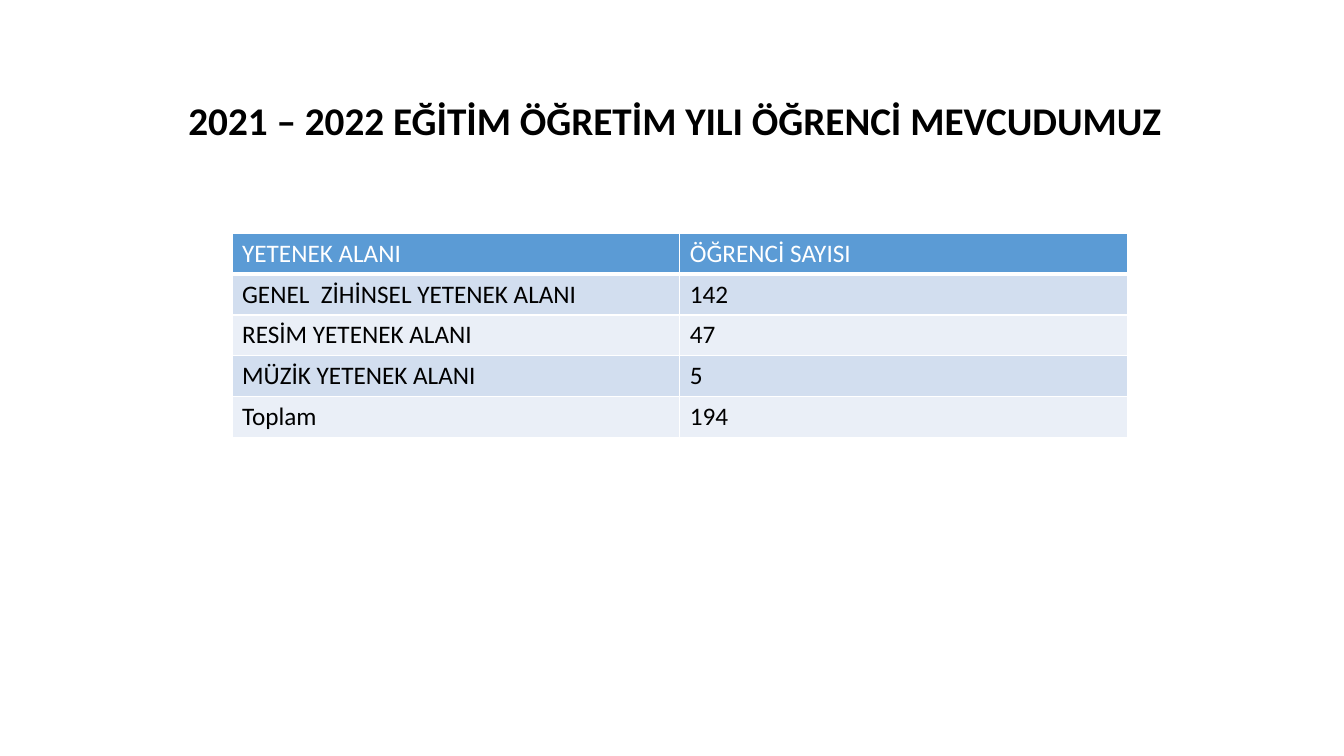
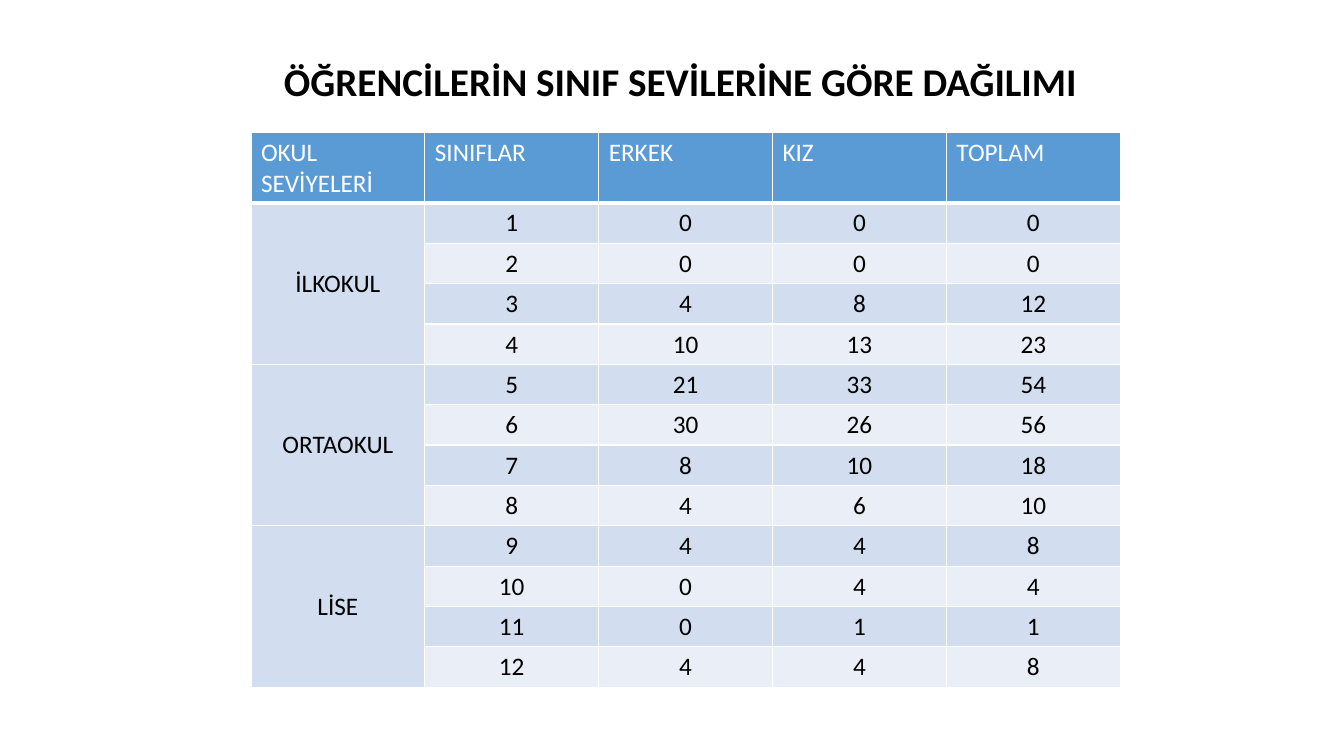
from dataclasses import dataclass

from lxml import etree
from pptx import Presentation
from pptx import util as u
from pptx.dml.color import RGBColor
from pptx.enum import text
from pptx.oxml import ns

EMU_PER_PX = 9525
FONT = "Calibri"
BLACK = RGBColor(0x00, 0x00, 0x00)
WHITE = RGBColor(0xFF, 0xFF, 0xFF)
HEADER_BLUE = RGBColor(0x5B, 0x9B, 0xD5)
BANDS = (RGBColor(0xEA, 0xEF, 0xF7), RGBColor(0xD2, 0xDE, 0xEF))

CLASSES_PER_LEVEL = 4
SCHOOL_LEVELS = ("İLKOKUL", "ORTAOKUL", "LİSE")
BOYS_AND_GIRLS = (
    (0, 0), (0, 0), (4, 8), (10, 13),
    (21, 33), (30, 26), (8, 10), (4, 6),
    (4, 4), (0, 4), (0, 1), (4, 4),
)


@dataclass(frozen=True)
class Box:
    left: int
    top: int
    width: int
    height: int

    def emu(self) -> tuple[u.Emu, ...]:
        return tuple(px(n) for n in (self.left, self.top, self.width, self.height))


@dataclass(frozen=True)
class TableSlide:
    title: str
    title_box: Box
    table_box: Box
    header_height: int
    row_height: int
    rows: tuple[tuple[str, ...], ...]
    body_alignment: text.PP_ALIGN = text.PP_ALIGN.LEFT
    rows_per_label: int = 1


def px(length: int) -> u.Emu:
    return u.Emu(length * EMU_PER_PX)


def add_run(paragraph, content: str, size: int, color: RGBColor, bold: bool = False) -> None:
    run = paragraph.add_run()
    run.text = content
    run.font.name = FONT
    run.font.size = u.Pt(size)
    run.font.bold = bold
    run.font.color.rgb = color


def add_title(slide, title: str, box: Box) -> None:
    frame = slide.shapes.add_textbox(*box.emu()).text_frame
    frame.word_wrap = False
    frame.auto_size = text.MSO_AUTO_SIZE.SHAPE_TO_FIT_TEXT
    add_run(frame.paragraphs[0], title, 28, BLACK, bold=True)


def set_borders(cell, bottom_points: int) -> None:
    properties = cell._tc.get_or_add_tcPr()
    for side, points in (("L", 1), ("R", 1), ("T", 1), ("B", bottom_points)):
        line = etree.SubElement(properties, ns.qn(f"a:ln{side}"), w=str(u.Pt(points)))
        fill = etree.SubElement(line, ns.qn("a:solidFill"))
        etree.SubElement(fill, ns.qn("a:srgbClr"), val=str(WHITE))


def style_cell(cell, fill: RGBColor, bottom_points: int) -> None:
    set_borders(cell, bottom_points)
    cell.fill.solid()
    cell.fill.fore_color.rgb = fill


def add_table(slide, content: TableSlide) -> None:
    column_count = len(content.rows[0])
    graphic = slide.shapes.add_table(len(content.rows), column_count, *content.table_box.emu())
    table = graphic.table
    for column in table.columns:
        column.width = px(content.table_box.width) // column_count
    for row_index, values in enumerate(content.rows):
        is_header = row_index == 0
        table.rows[row_index].height = px(content.header_height if is_header else content.row_height)
        for column_index, value in enumerate(values):
            cell = table.cell(row_index, column_index)
            style_cell(cell, HEADER_BLUE if is_header else BANDS[row_index % 2], 3 if is_header else 1)
            paragraph = cell.text_frame.paragraphs[0]
            if not is_header:
                paragraph.alignment = content.body_alignment
            if value:
                add_run(paragraph, value, 18, WHITE if is_header else BLACK)
    if content.rows_per_label > 1:
        for first in range(1, len(content.rows), content.rows_per_label):
            label = table.cell(first, 0)
            label.merge(table.cell(first + content.rows_per_label - 1, 0))
            label.vertical_anchor = text.MSO_ANCHOR.MIDDLE
    graphic.height = px(content.table_box.height)


def class_rows() -> tuple[tuple[str, ...], ...]:
    rows = [("OKUL SEVİYELERİ", "SINIFLAR", "ERKEK", "KIZ", "TOPLAM")]
    for index, (boys, girls) in enumerate(BOYS_AND_GIRLS):
        level, position = divmod(index, CLASSES_PER_LEVEL)
        label = SCHOOL_LEVELS[level] if position == 0 else ""
        rows.append((label, str(index + 1), str(boys), str(girls), str(boys + girls)))
    return tuple(rows)


SLIDES = (
    TableSlide(
        title="2021 – 2022 EĞİTİM ÖĞRETİM YILI ÖĞRENCİ MEVCUDUMUZ",
        title_box=Box(170, 87, 956, 55),
        table_box=Box(221, 222, 853, 195),
        header_height=39,
        row_height=39,
        rows=(
            ("YETENEK ALANI", "ÖĞRENCİ SAYISI"),
            ("GENEL  ZİHİNSEL YETENEK ALANI", "142"),
            ("RESİM YETENEK ALANI", "47"),
            ("MÜZİK YETENEK ALANI", "5"),
            ("Toplam", "194"),
        ),
    ),
    TableSlide(
        title="ÖĞRENCİLERİN SINIF SEVİLERİNE GÖRE DAĞILIMI",
        title_box=Box(261, 50, 783, 55),
        table_box=Box(239, 126, 828, 528),
        header_height=67,
        row_height=38,
        rows=class_rows(),
        body_alignment=text.PP_ALIGN.CENTER,
        rows_per_label=CLASSES_PER_LEVEL,
    ),
)


def main() -> None:
    presentation = Presentation()
    presentation.slide_width = px(1280)
    presentation.slide_height = px(720)
    for content in SLIDES:
        slide = presentation.slides.add_slide(presentation.slide_layouts[6])
        add_table(slide, content)
        add_title(slide, content.title, content.title_box)
    presentation.save("out.pptx")


if __name__ == "__main__":
    main()
